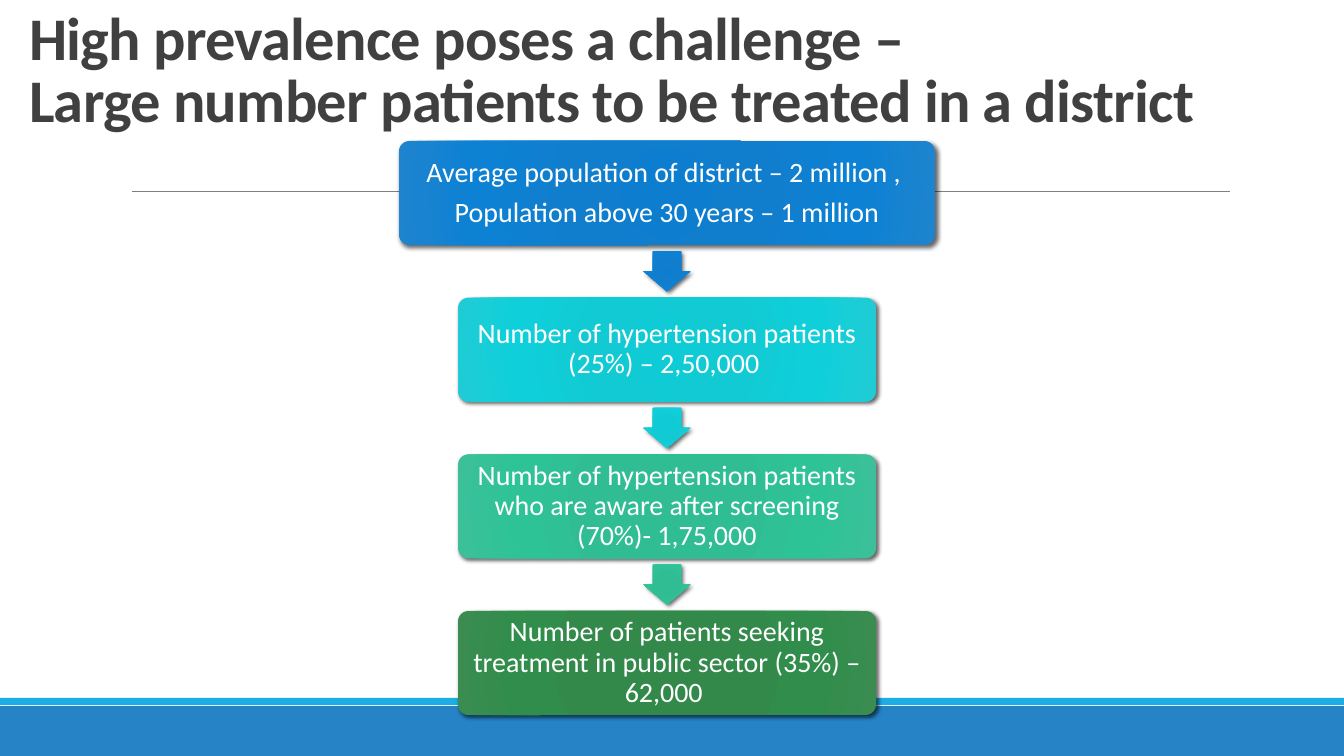
import dataclasses

import pptx
import pptx.dml.color
import pptx.enum.shapes
import pptx.enum.text
import pptx.oxml
import pptx.oxml.ns
import pptx.util

SLIDE_W, SLIDE_H = 1344, 756
EMU_PER_PX = 12192000 / SLIDE_W
SHAPE = pptx.enum.shapes.MSO_SHAPE
ALIGN = pptx.enum.text.PP_ALIGN
ANCHOR = pptx.enum.text.MSO_ANCHOR
NSDECLS = pptx.oxml.ns.nsdecls("a")


@dataclasses.dataclass(frozen=True)
class Theme:
    font: str = "Calibri"
    title_pt: float = 43.2
    step_pt: float = 20
    title: str = "404040"
    step_text: str = "FFFFFF"
    rule: str = "808080"
    band: str = "2683C6"
    strip: str = "1CADE4"
    stops: tuple = (0, 34, 70, 100)
    blue: tuple = ("0D7ECF", "117ECD", "0D81D4", "1E84CE")
    cyan: tuple = ("0ECBD5", "12CAD3", "0FD0DA", "20CBD4")
    teal: tuple = ("2DBE94", "30BD94", "2EC397", "3CC09A")
    green: tuple = ("2F8949", "32894A", "318D4B", "3A8C51")


THEME = Theme()
TITLE = ("High prevalence poses a challenge – \v"
         "Large number patients to be treated in a district")
# Each step: box width, gradient, paragraphs
STEPS = [
    (536, THEME.blue, ["Average population of district – 2 million , ",
                       "Population above 30 years – 1 million"]),
    (418, THEME.cyan, ["Number of hypertension patients (25%) – 2,50,000 "]),
    (418, THEME.teal, ["Number of hypertension patients who are aware "
                       "after screening (70%)- 1,75,000"]),
    (418, THEME.green, ["Number of patients seeking treatment in public "
                        "sector (35%) – 62,000 "]),
]


def px(n):
    return pptx.util.Emu(round(n * EMU_PER_PX))


def rgb(color):
    return pptx.dml.color.RGBColor.from_string(color)


def add_shape(s, kind, x, y, w, h):
    """Add a shape without line or shadow."""
    sp = s.shapes.add_shape(kind, px(x), px(y), px(w), px(h))
    sp.shadow.inherit = False
    sp.line.fill.background()
    return sp


def add_glow_shape(s, kind, x, y, w, h, colors):
    """Add a shape with a radial gradient and a soft drop shadow."""
    sp = add_shape(s, kind, x, y, w, h)
    stops = "".join(
        f'<a:gs pos="{pos * 1000}"><a:srgbClr val="{color}"/></a:gs>'
        for pos, color in zip(THEME.stops, colors))
    gradient = pptx.oxml.parse_xml(
        f'<a:gradFill {NSDECLS} rotWithShape="1"><a:gsLst>{stops}</a:gsLst>'
        '<a:path path="circle"><a:fillToRect l="100000" t="100000" '
        'r="100000" b="100000"/></a:path></a:gradFill>')
    shadow = pptx.oxml.parse_xml(
        f'<a:outerShdw {NSDECLS} blurRad="38100" dist="25400" dir="2700000" '
        'rotWithShape="0"><a:srgbClr val="000000"><a:alpha val="60000"/>'
        '</a:srgbClr></a:outerShdw>')
    props = sp._element.spPr
    props.find(pptx.oxml.ns.qn("a:prstGeom")).addnext(gradient)
    props.find(pptx.oxml.ns.qn("a:effectLst")).append(shadow)
    return sp


def add_backdrop(s, w, h):
    """Draw the footer bands and the rule under the title."""
    for y, height, color in ((h - 50, 50, THEME.band),
                             (h - 58, 7, THEME.strip)):
        sp = add_shape(s, SHAPE.RECTANGLE, 0, y, w, height)
        sp.fill.solid()
        sp.fill.fore_color.rgb = rgb(color)
    rule = s.shapes.add_connector(pptx.enum.shapes.MSO_CONNECTOR.STRAIGHT,
                                  px(132), px(191), px(1230), px(191))
    rule.line.color.rgb = rgb(THEME.rule)
    rule.line.width = pptx.util.Pt(0.5)
    rule._element.spPr.append(
        pptx.oxml.parse_xml(f"<a:effectLst {NSDECLS}/>"))


def add_title(s, x, y, w, h):
    title = s.shapes.title
    title.left, title.top, title.width, title.height = map(px, (x, y, w, h))
    tf = title.text_frame
    tf.text = TITLE
    tf.word_wrap = True
    tf.auto_size = pptx.enum.text.MSO_AUTO_SIZE.NONE
    tf.vertical_anchor = ANCHOR.BOTTOM
    p = tf.paragraphs[0]
    p.alignment = ALIGN.LEFT
    p.line_spacing = 0.85
    p.font.name = THEME.font
    p.font.size = pptx.util.Pt(THEME.title_pt)
    p.font.bold = True
    p.font.color.rgb = rgb(THEME.title)
    for r in p.runs:
        r.font._element.set("spc", "-50")


def add_step(s, x, y, w, h, colors, lines):
    sp = add_glow_shape(s, SHAPE.ROUNDED_RECTANGLE, x, y, w, h, colors)
    sp.adjustments[0] = 0.1
    tf = sp.text_frame
    tf.word_wrap = True
    tf.vertical_anchor = ANCHOR.MIDDLE
    tf.margin_left = tf.margin_right = px(8)
    tf.margin_top = tf.margin_bottom = px(8)
    tf.text = "\n".join(lines)
    for p in tf.paragraphs:
        p.alignment = ALIGN.CENTER
        p.line_spacing = 0.9
        p.space_after = pptx.util.Pt(7)
        p.font.name = THEME.font
        p.font.size = pptx.util.Pt(THEME.step_pt)
        p.font.color.rgb = rgb(THEME.step_text)


def add_flow(s, x, y, w, h):
    """Stack the steps evenly in the box, with an arrow in each gap."""
    step_h, arrow_w, arrow_h = 104, 47, 40
    pitch = (h - step_h) / (len(STEPS) - 1)
    center = x + w / 2
    for i, (step_w, colors, lines) in enumerate(STEPS):
        top = y + i * pitch
        add_step(s, center - step_w / 2, top, step_w, step_h, colors, lines)
        if i < len(STEPS) - 1:
            arrow_y = top + (step_h + pitch - arrow_h) / 2
            arrow = add_glow_shape(s, SHAPE.DOWN_ARROW, center - arrow_w / 2,
                                   arrow_y, arrow_w, arrow_h, colors)
            arrow.adjustments[0] = 0.6
            arrow.adjustments[1] = 0.5


def main():
    prs = pptx.Presentation()
    prs.slide_width, prs.slide_height = px(SLIDE_W), px(SLIDE_H)
    s = prs.slides.add_slide(prs.slide_layouts.get_by_name("Title Only"))
    add_backdrop(s, SLIDE_W, SLIDE_H)
    add_title(s, 19, 12, 1231, 128)
    add_flow(s, 399, 141, 536, 574)
    prs.save("out.pptx")


if __name__ == "__main__":
    main()
